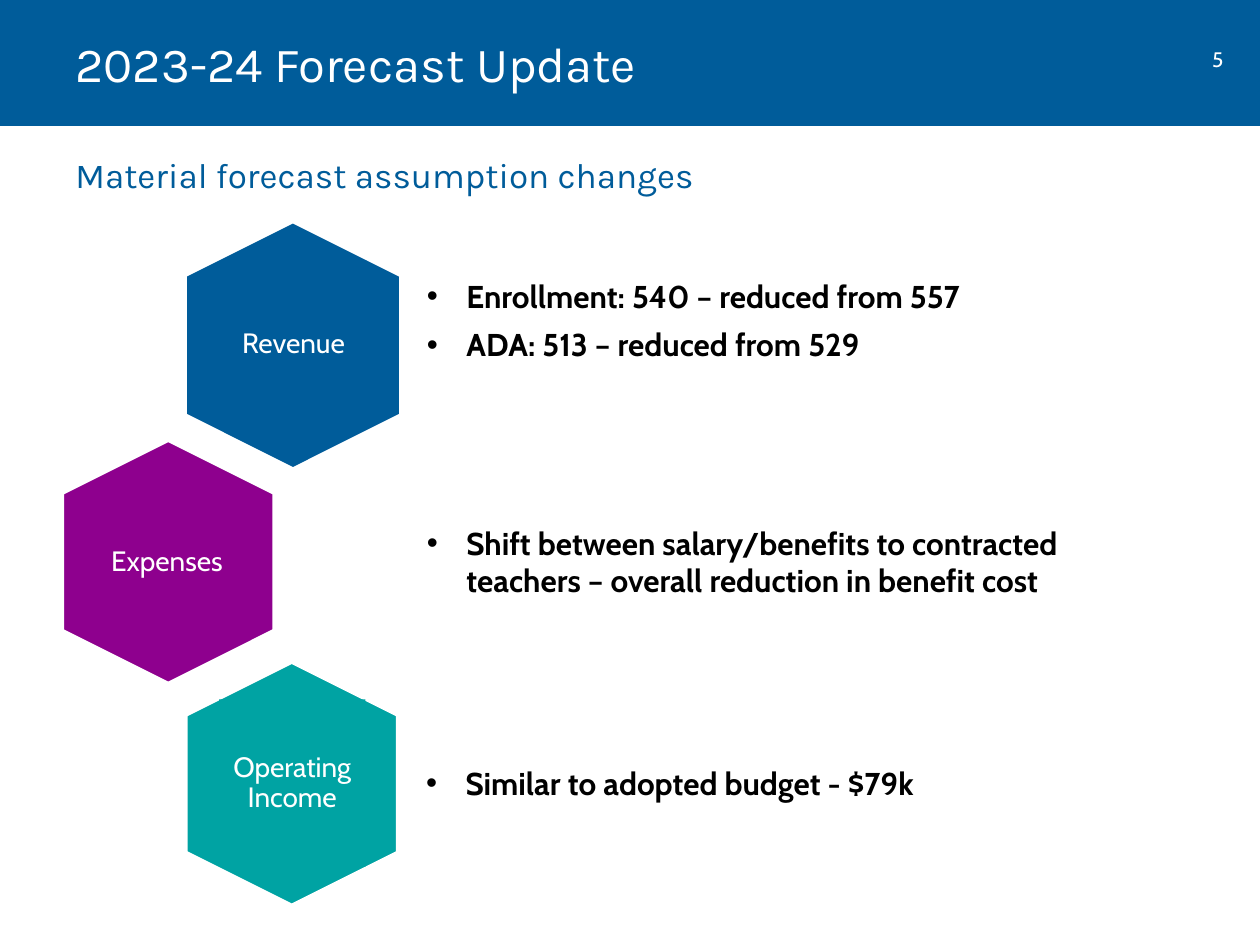
from pptx import Presentation
from pptx.dml.color import RGBColor
from pptx.enum.shapes import MSO_SHAPE as SHAPE
from pptx.enum.text import MSO_ANCHOR as ANCHOR, PP_ALIGN as ALIGN
from pptx.util import Pt
from lxml.etree import SubElement
from pptx.oxml.ns import qn

COLORS = {
    "blue": "005C9A",
    "purple": "8E008E",
    "teal": "00A3A3",
    "white": "FFFFFF",
    "black": "000000",
}

deck = Presentation()
deck.slide_width, deck.slide_height = Pt(720), Pt(540)
slide = deck.slides.add_slide(deck.slide_layouts[6])


def add_filled(kind, box, color):
    shape = slide.shapes.add_shape(kind, *map(Pt, box))
    shape.shadow.inherit = False
    shape.fill.solid()
    shape.fill.fore_color.rgb = RGBColor.from_string(COLORS[color])
    shape.line.fill.background()
    return shape


def write(shape, lines, font, size, color, anchor=ANCHOR.TOP, bullet=False,
          bold=False, **paragraph_format):
    frame = shape.text_frame
    frame.word_wrap = True
    frame.vertical_anchor = anchor
    for i, line in enumerate(lines):
        paragraph = frame.add_paragraph() if i else frame.paragraphs[0]
        paragraph.text = line
        if bullet:
            props = paragraph._p.get_or_add_pPr()
            props.set("marL", str(Pt(22.5)))
            props.set("indent", str(Pt(-22.5)))
            SubElement(props, qn("a:buFont"), typeface="Arial")
            SubElement(props, qn("a:buChar"), char="•")
        for name, value in paragraph_format.items():
            setattr(paragraph, name, value)
        run_font = paragraph.runs[0].font
        for name, value in {"name": font, "size": Pt(size), "bold": bold}.items():
            setattr(run_font, name, value)
        run_font.color.rgb = RGBColor.from_string(COLORS[color])


# Header band, page number, title and subtitle
add_filled(SHAPE.RECTANGLE, (0, 0, 720, 72), "blue")
page_number = slide.shapes.add_textbox(Pt(679.7), Pt(23), Pt(32.4), Pt(21.6))
write(page_number, ["5"], "Cabin", 12, "white", alignment=ALIGN.CENTER)
title = slide.shapes.add_textbox(Pt(36), Pt(0), Pt(641.5), Pt(72))
write(title, ["2023-24 Forecast Update"], "Karla", 28, "white", ANCHOR.MIDDLE)
subtitle = slide.shapes.add_textbox(Pt(36), Pt(84.2), Pt(648), Pt(37.4))
write(subtitle, ["Material forecast assumption changes"], "Karla", 20, "blue")

# Sections: label, colour, hexagon corner, outlined, label box, notes box, notes
sections = [
    ("Revenue", "blue", (97.9, 136.8), False, (126, 149, 83.5, 95.8),
     (236.9, 127.4, 387.4, 111),
     ["Enrollment: 540 – reduced from 557", "ADA: 513 – reduced from 529"]),
    ("Expenses", "purple", (26.6, 260.6), True, (39.6, 288, 111.6, 67),
     (236.9, 251.3, 387.4, 139),
     ["Shift between salary/benefits to contracted teachers"
      " – overall reduction in benefit cost"]),
    ("Operating Income", "teal", (97.2, 387.4), True, (125.3, 399.6, 83.5, 95.8),
     (236.4, 378, 411.1, 139),
     ["Similar to adopted budget - $79k"]),
]
for label, color, corner, outlined, label_box, notes_box, notes in sections:
    hexagon = add_filled(SHAPE.HEXAGON, (*corner, 139, 121), color)
    hexagon.rotation = 90
    hexagon.adjustments[0] = 0.25
    if outlined:
        hexagon.line.color.rgb = RGBColor.from_string(COLORS["white"])
        hexagon.line.width = Pt(2)

    caption = add_filled(SHAPE.RECTANGLE, label_box, color)
    for side in ("left", "top", "right", "bottom"):
        setattr(caption.text_frame, f"margin_{side}", Pt(5))
    write(caption, [label], "Cabin", 16, "white", ANCHOR.MIDDLE,
          alignment=ALIGN.CENTER, line_spacing=0.9, space_after=Pt(5.6))

    details = slide.shapes.add_textbox(*map(Pt, notes_box))
    write(details, notes, "Cabin", 18, "black", ANCHOR.MIDDLE, bullet=True,
          bold=True, space_after=Pt(6))

deck.save("out.pptx")
